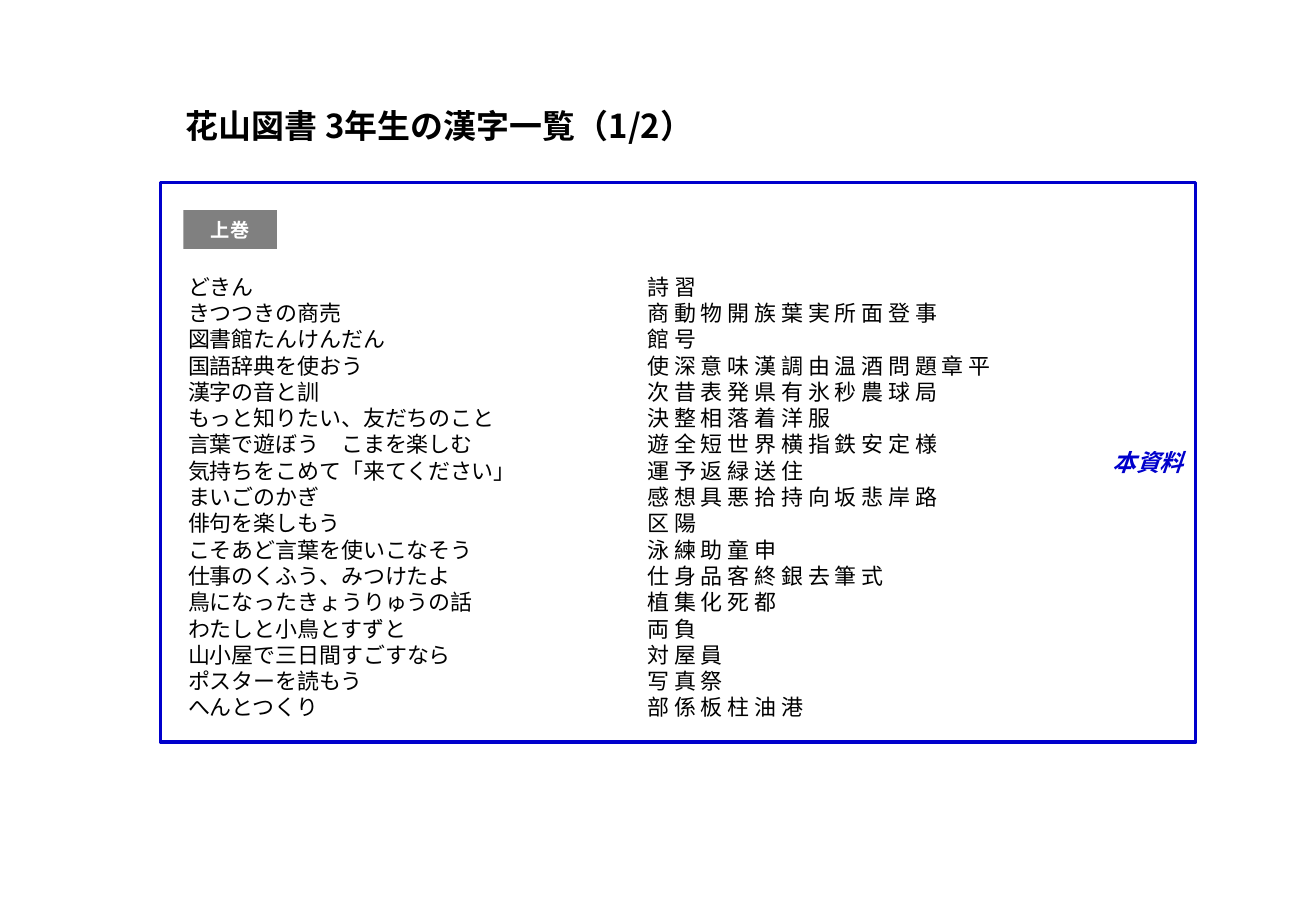
import pptx
import pptx.util
import pptx.dml.color
import pptx.enum.shapes
import pptx.enum.text
import pptx.oxml.ns
import lxml.etree

Inches = pptx.util.Inches
Pt = pptx.util.Pt
ALIGN = pptx.enum.text.PP_ALIGN
TITLE = "花山図書 3年生の漢字一覧（1/2）"
UNITS = [
    ("どきん", "詩習"),
    ("きつつきの商売", "商動物開族葉実所面登事"),
    ("図書館たんけんだん", "館号"),
    ("国語辞典を使おう", "使深意味漢調由温酒問題章平"),
    ("漢字の音と訓", "次昔表発県有氷秒農球局"),
    ("もっと知りたい、友だちのこと", "決整相落着洋服"),
    ("言葉で遊ぼう　こまを楽しむ", "遊全短世界横指鉄安定様"),
    ("気持ちをこめて「来てください」", "運予返緑送住"),
    ("まいごのかぎ", "感想具悪拾持向坂悲岸路"),
    ("俳句を楽しもう", "区陽"),
    ("こそあど言葉を使いこなそう", "泳練助童申"),
    ("仕事のくふう、みつけたよ", "仕身品客終銀去筆式"),
    ("鳥になったきょうりゅうの話", "植集化死都"),
    ("わたしと小鳥とすずと", "両負"),
    ("山小屋で三日間すごすなら", "対屋員"),
    ("ポスターを読もう", "写真祭"),
    ("へんとつくり", "部係板柱油港"),
]


def paint(code):
    return pptx.dml.color.RGBColor.from_string(code)


class Sheet:
    """Holds the style and the current slide, and draws its elements."""

    face = "Noto Sans CJK JP"
    ink = "000000"
    blue = "0000CC"
    gray = "808080"
    white = "FFFFFF"
    pitch = 1.2

    def __init__(self, slide):
        self.slide = slide

    def fill_text(self, frame, lines, size, color, align=ALIGN.LEFT, bold=False, slant=False, tab=None):
        tag = pptx.oxml.ns.qn
        frame.word_wrap = True
        for i, line in enumerate(lines):
            para = frame.paragraphs[0] if i == 0 else frame.add_paragraph()
            para.text = line
            para.alignment = align
            para.line_spacing = Pt(size * self.pitch)
            font = para.font
            font.name = self.face
            font.size = Pt(size)
            font.bold = bold
            font.italic = slant
            font.color.rgb = paint(color)
            props = para._p.get_or_add_pPr()
            base = props.find(tag("a:defRPr"))
            east = lxml.etree.SubElement(base, tag("a:ea"))
            east.set("typeface", self.face)
            if tab:
                stops = lxml.etree.Element(tag("a:tabLst"))
                stop = lxml.etree.SubElement(stops, tag("a:tab"))
                stop.set("pos", str(Inches(tab)))
                stop.set("algn", "l")
                base.addprevious(stops)

    def text(self, box, lines, size, **style):
        shape = self.slide.shapes.add_textbox(*map(Inches, box))
        self.fill_text(shape.text_frame, lines, size, self.ink, **style)

    def rect(self, box, label, size, color, align, fill=None, line=None, slant=False):
        kind = pptx.enum.shapes.MSO_SHAPE.RECTANGLE
        shape = self.slide.shapes.add_shape(kind, *map(Inches, box))
        shape.shadow.inherit = False
        if fill:
            shape.fill.solid()
            shape.fill.fore_color.rgb = paint(fill)
        else:
            shape.fill.background()
        if line:
            shape.line.color.rgb = paint(line)
            shape.line.width = Pt(2)
        else:
            shape.line.fill.background()
        shape.text_frame.vertical_anchor = pptx.enum.text.MSO_ANCHOR.MIDDLE
        self.fill_text(shape.text_frame, [label], size, color, align, True, slant)


def main():
    deck = pptx.Presentation()
    deck.slide_width = Inches(10.83)
    deck.slide_height = Inches(7.5)
    sheet = Sheet(deck.slides.add_slide(deck.slide_layouts[6]))
    rows = [f"{name}\t{' '.join(kanji)}" for name, kanji in UNITS]
    sheet.text((1.45, 2.2, 7.77, 3.82), rows, 13, tab=3.78)
    sheet.text((1.43, 0.82, 7.87, 0.43), [TITLE], 19.5, bold=True)
    sheet.rect((1.51, 1.73, 0.77, 0.32), "上巻", 11.4, sheet.white, ALIGN.CENTER, fill=sheet.gray)
    sheet.rect((1.32, 1.5, 8.52, 4.61), "本資料", 14, sheet.blue, ALIGN.RIGHT, line=sheet.blue, slant=True)
    deck.save("out.pptx")


if __name__ == "__main__":
    main()
